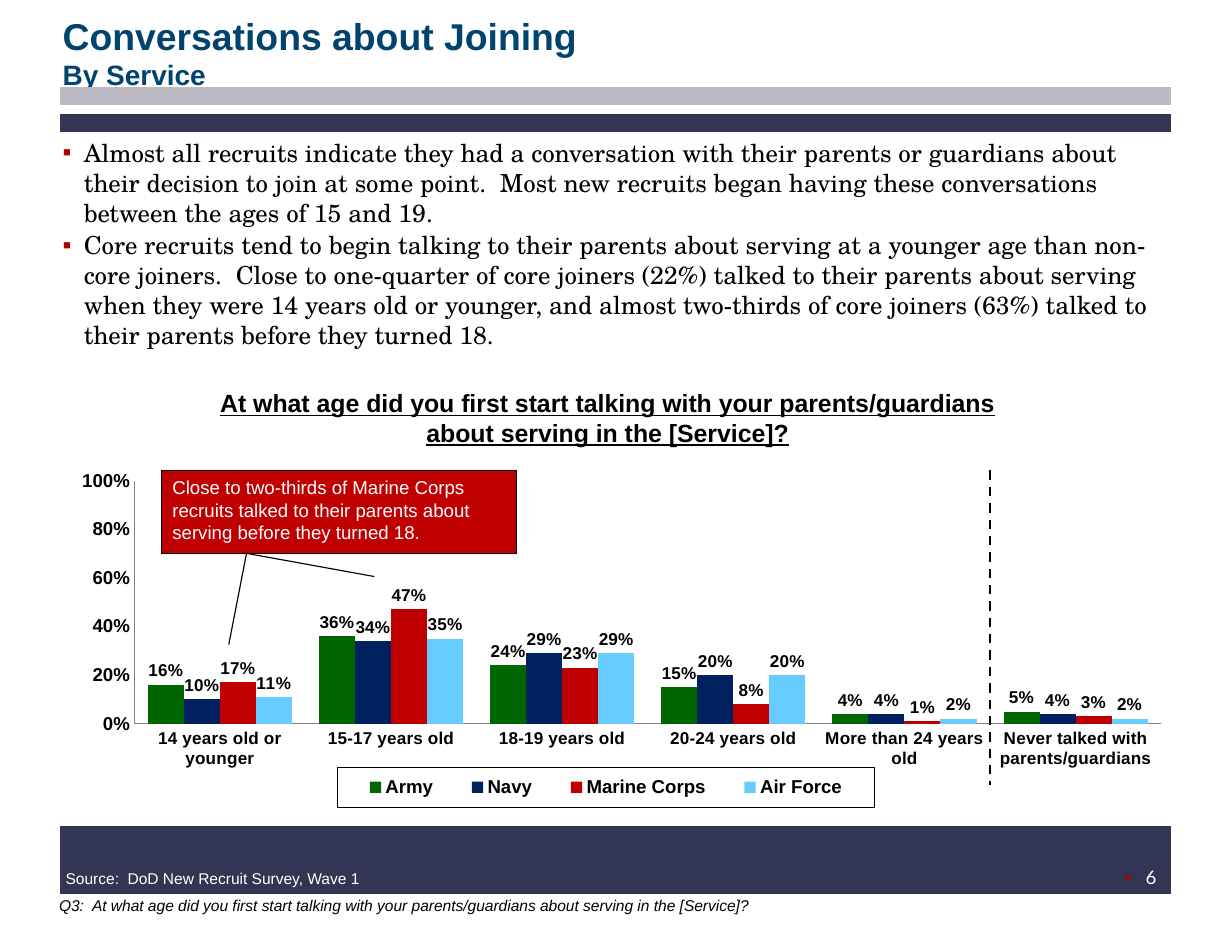
from lxml import etree
from pptx import Presentation
from pptx.chart.data import CategoryChartData
from pptx.dml.color import RGBColor
from pptx.enum.chart import XL_CHART_TYPE as ChartType, XL_LABEL_POSITION as LabelPosition
from pptx.enum.chart import XL_LEGEND_POSITION as LegendPosition, XL_TICK_MARK as TickMark
from pptx.enum.dml import MSO_LINE
from pptx.enum.shapes import MSO_CONNECTOR, MSO_SHAPE
from pptx.enum.text import MSO_ANCHOR, MSO_AUTO_SIZE, PP_ALIGN
from pptx.oxml import parse_xml
from pptx.oxml.ns import nsdecls, qn
from pptx.util import Cm, Pt

COLORS = {
    "black": "000000", "white": "FFFFFF", "title": "00436E", "band": "323554",
    "gray band": "BCBAC2", "axis": "808080", "bullet": "AB0101", "callout": "C00000",
}
AGES = ["14 years old or younger", "15-17 years old", "18-19 years old",
        "20-24 years old", "More than 24 years old", "Never talked with parents/guardians"]
SERVICES = {
    "Army": ("006600", [0.16, 0.36, 0.24, 0.15, 0.04, 0.05]),
    "Navy": ("002060", [0.10, 0.34, 0.29, 0.20, 0.04, 0.04]),
    "Marine Corps": ("C00000", [0.17, 0.47, 0.23, 0.08, 0.01, 0.03]),
    "Air Force": ("66CCFF", [0.11, 0.35, 0.29, 0.20, 0.02, 0.02]),
}
FINDINGS = [
    "Almost all recruits indicate they had a conversation with their parents or guardians "
    "about their decision to join at some point.  Most new recruits began having these "
    "conversations between the ages of 15 and 19.",
    "Core recruits tend to begin talking to their parents about serving at a younger age than "
    "non-core joiners.  Close to one-quarter of core joiners (22%) talked to their parents "
    "about serving when they were 14 years old or younger, and almost two-thirds of core "
    "joiners (63%) talked to their parents before they turned 18.",
]
QUESTION = ("At what age did you first start talking with your parents/guardians "
            "about serving in the [Service]?")


def rgb(name):
    return RGBColor.from_string(COLORS.get(name, name))


def format_font(font, color="black", **values):
    for name, value in ({"name": "Arial"} | values).items():
        setattr(font, name, value)
    font.color.rgb = rgb(color)


def place(shape, left, top, width, height):
    box = {"left": left, "top": top, "width": width, "height": height}
    for name, value in box.items():
        setattr(shape, name, Cm(value))


def set_frame(frame, inset_x=0.25, inset_y=0.13, anchor=MSO_ANCHOR.TOP):
    values = {"word_wrap": True, "auto_size": MSO_AUTO_SIZE.NONE, "vertical_anchor": anchor,
              "margin_left": Cm(inset_x), "margin_right": Cm(inset_x),
              "margin_top": Cm(inset_y), "margin_bottom": Cm(inset_y)}
    for name, value in values.items():
        setattr(frame, name, value)


def add_bullet(paragraph, indent=0.48):
    properties = paragraph._p.get_or_add_pPr()
    properties.set("marL", str(Cm(indent)))
    properties.set("indent", str(-Cm(indent)))
    color = etree.SubElement(properties, qn("a:buClr"))
    etree.SubElement(color, qn("a:srgbClr"), val=COLORS["bullet"])
    etree.SubElement(properties, qn("a:buFont"), typeface="Arial")
    etree.SubElement(properties, qn("a:buChar"), char="▪")


def write(frame, texts, fonts, align=PP_ALIGN.LEFT, bullets=False):
    for index, (text, font) in enumerate(zip(texts, fonts)):
        paragraph = frame.paragraphs[0] if index == 0 else frame.add_paragraph()
        if bullets:
            add_bullet(paragraph)
        paragraph.alignment = align
        paragraph.space_before = Pt(1.6 if bullets and index else 0)
        run = paragraph.add_run()
        run.text = text
        format_font(run.font, **font)


def add_text(slide, box, text, font, **options):
    shape = slide.shapes.add_textbox(*map(Cm, box))
    set_frame(shape.text_frame)
    write(shape.text_frame, [text], [font], **options)


def add_line(slide, start, end, color, width, dash=None):
    line = slide.shapes.add_connector(MSO_CONNECTOR.STRAIGHT, *map(Cm, start + end))
    line.line.color.rgb = rgb(color)
    line.line.width = Pt(width)
    if dash:
        line.line.dash_style = dash
    etree.SubElement(line._element.spPr, qn("a:effectLst"))


def set_layout(parent, layout, inner=False):
    """Give a plot area or legend a fixed place, as fractions of the chart."""
    for old in parent.findall(qn("c:layout")):
        parent.remove(old)
    target = '<c:layoutTarget val="inner"/>' if inner else ""
    modes = '<c:xMode val="edge"/><c:yMode val="edge"/>'
    sizes = "".join(f'<c:{key} val="{value}"/>' for key, value in zip("xywh", layout))
    element = parse_xml(f'<c:layout {nsdecls("c")}><c:manualLayout>{target}{modes}{sizes}'
                        "</c:manualLayout></c:layout>")
    position = parent.find(qn("c:legendPos"))
    parent.insert(0 if position is None else parent.index(position) + 1, element)


def add_age_chart(slide, box):
    data = CategoryChartData(number_format="0%")
    data.categories = AGES
    for name, (_, values) in SERVICES.items():
        data.add_series(name, values)
    chart = slide.shapes.add_chart(ChartType.COLUMN_CLUSTERED, *map(Cm, box), data).chart
    format_font(chart.font, size=Pt(12), bold=True)
    chart.has_title = False

    # Columns and their labels
    plot = chart.plots[0]
    plot.gap_width, plot.overlap, plot.vary_by_categories = 75, 0, False
    for series, (color, _) in zip(plot.series, SERVICES.values()):
        series.format.fill.solid()
        series.format.fill.fore_color.rgb = rgb(color)
        labels = series.data_labels
        format_font(labels.font, size=Pt(11), bold=True)
        label_values = {"show_value": True, "number_format": "0%",
                        "number_format_is_linked": False,
                        "position": LabelPosition.OUTSIDE_END}
        for name, value in label_values.items():
            setattr(labels, name, value)

    # Axes
    for axis, size in ((chart.category_axis, 11), (chart.value_axis, 12)):
        axis.has_major_gridlines = False
        axis.major_tick_mark = axis.minor_tick_mark = TickMark.NONE
        axis.format.line.color.rgb = rgb("axis")
        format_font(axis.tick_labels.font, size=Pt(size), bold=True)
    value_axis = chart.value_axis
    value_axis.minimum_scale, value_axis.maximum_scale, value_axis.major_unit = 0, 1, 0.2
    value_axis.tick_labels.number_format = "0%"
    value_axis.tick_labels.number_format_is_linked = False

    # Legend with a thin frame
    chart.has_legend = True
    legend = chart.legend
    legend.position, legend.include_in_layout = LegendPosition.BOTTOM, False
    format_font(legend.font, size=Pt(12), bold=True)
    set_layout(legend._element, (0.26, 0.88, 0.45, 0.11))
    frame = parse_xml(f'<c:spPr {nsdecls("c", "a")}><a:ln w="9525"><a:solidFill>'
                      f'<a:srgbClr val="{COLORS["black"]}"/></a:solidFill></a:ln></c:spPr>')
    legend._element.find(qn("c:txPr")).addprevious(frame)
    set_layout(chart._chartSpace.chart.plotArea, (0.09, 0.09, 0.86, 0.67), inner=True)


def add_callout(slide, box, text):
    shape = slide.shapes.add_shape(MSO_SHAPE.LINE_CALLOUT_2, *map(Cm, box))
    shape.shadow.inherit = False
    for index, value in enumerate((1.28, 0.6, 1, 0.24, 2.1, 0.19)):
        shape.adjustments[index] = value
    shape.fill.solid()
    shape.fill.fore_color.rgb = rgb("callout")
    shape.line.color.rgb = rgb("black")
    shape.line.width = Pt(0.75)
    set_frame(shape.text_frame)
    write(shape.text_frame, [text], [{"size": Pt(12), "color": "white"}])


def main():
    presentation = Presentation()
    presentation.slide_width, presentation.slide_height = Cm(27.94), Cm(21.59)
    slide = presentation.slides.add_slide(presentation.slide_layouts[1])

    # Header and footer bands
    for y, color, width in ((2.18, "gray band", 12), (19.51, "band", 44), (2.79, "band", 12)):
        add_line(slide, (1.35, y), (26.55, y), color, width)

    # Title and findings
    title, body = slide.placeholders
    place(title, 1.27, 0.46, 25.53, 1.45)
    set_frame(title.text_frame, 0.15, 0.15, MSO_ANCHOR.MIDDLE)
    write(title.text_frame, ["Conversations about Joining", "By Service"],
          [{"size": Pt(size), "bold": True, "color": "title"} for size in (24, 18)])
    place(body, 1.27, 2.97, 25.4, 3.61)
    set_frame(body.text_frame, 0.15, 0.15)
    write(body.text_frame, FINDINGS, [{"size": Pt(16), "name": "TeX Gyre Schola"}] * 2,
          bullets=True)

    # Chart, its question and its marks
    add_age_chart(slide, (0.61, 10.16, 27.08, 8.23))
    add_text(slide, (4.55, 8.66, 18.47, 1.65), QUESTION,
             {"size": Pt(16), "bold": True, "underline": True}, align=PP_ALIGN.CENTER)
    add_callout(slide, (3.66, 10.67, 8.05, 1.88),
                "Close to two-thirds of Marine Corps recruits talked to their parents about "
                "serving before they turned 18.")
    add_line(slide, (22.45, 10.67), (22.45, 17.81), "black", 1.5, MSO_LINE.DASH)

    # Source, page number and survey question
    add_text(slide, (1.24, 19.58, 13.97, 0.69), "Source:  DoD New Recruit Survey, Wave 1",
             {"size": Pt(10), "color": "white"})
    add_text(slide, (24.38, 19.51, 2.97, 1.47), "6",
             {"size": Pt(12), "name": "Lato", "color": "white"},
             align=PP_ALIGN.CENTER, bullets=True)
    add_text(slide, (1.09, 20.19, 25.45, 0.69), "Q3:  " + QUESTION,
             {"size": Pt(10), "italic": True})
    presentation.save("out.pptx")


if __name__ == "__main__":
    main()
